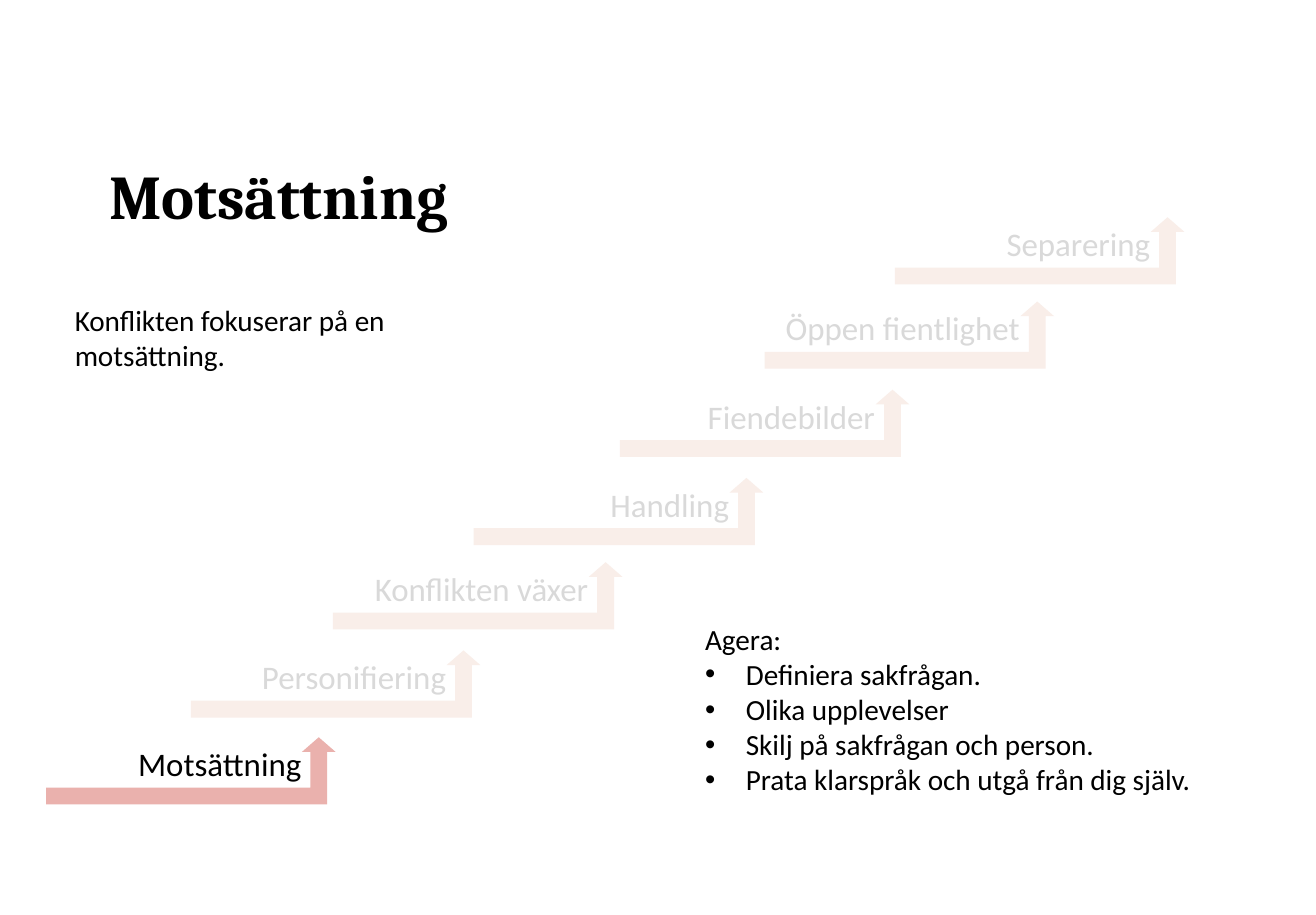
import pptx
import pptx.util
import pptx.dml.color
import pptx.enum.shapes
import pptx.enum.text
import pptx.oxml.ns
from lxml import etree

Inches, Pt = pptx.util.Inches, pptx.util.Pt
RGBColor = pptx.dml.color.RGBColor
PP_ALIGN = pptx.enum.text.PP_ALIGN

BLACK = RGBColor(0x00, 0x00, 0x00)
MUTED_TEXT = RGBColor(0xD9, 0xD9, 0xD9)
ACTIVE_STEP = RGBColor(0xEA, 0xB1, 0xAD)
MUTED_STEP = RGBColor(0xF9, 0xEE, 0xE9)

# Content
HEADING = "Motsättning"
DESCRIPTION = "Konflikten fokuserar på en motsättning."
ADVICE_HEADING = "Agera:"
ADVICE = [
    "Definiera sakfrågan.",
    "Olika upplevelser",
    "Skilj på sakfrågan och person.",
    "Prata klarspråk och utgå från dig själv.",
]
# Conflict steps from the bottom up: label, arrow left, arrow top
STEPS = [
    ("Motsättning", 0.35, 5.6),
    ("Personifiering", 1.45, 4.94),
    ("Konflikten växer", 2.53, 4.27),
    ("Handling", 3.6, 3.63),
    ("Fiendebilder", 4.71, 2.96),
    ("Öppen fientlighet", 5.81, 2.29),
    ("Separering", 6.8, 1.65),
]
ARROW_SIZE = (2.2, 0.51)
LABEL_SIZE = (2.09, 0.4)
LABEL_OFFSET = 0.15
BULLET_INDENT = 0.31


def add_run(paragraph, text, size, color=BLACK, font="Calibri", bold=False):
    run = paragraph.add_run()
    run.text = text
    run.font.name, run.font.size, run.font.bold = font, Pt(size), bold
    run.font.color.rgb = color


def add_text_frame(slide, left, top, width, height):
    box = slide.shapes.add_textbox(*map(Inches, (left, top, width, height)))
    box.text_frame.word_wrap = True
    return box.text_frame


def add_bullet(paragraph):
    properties = paragraph._p.get_or_add_pPr()
    properties.set("marL", str(Inches(BULLET_INDENT)))
    properties.set("indent", str(-Inches(BULLET_INDENT)))
    font = etree.SubElement(properties, pptx.oxml.ns.qn("a:buFont"))
    font.set("typeface", "Arial")
    bullet = etree.SubElement(properties, pptx.oxml.ns.qn("a:buChar"))
    bullet.set("char", "•")


def add_step(slide, label, left, top, active):
    label_frame = add_text_frame(slide, left - LABEL_OFFSET, top, *LABEL_SIZE)
    label_frame.margin_right = 0
    paragraph = label_frame.paragraphs[0]
    paragraph.alignment = PP_ALIGN.RIGHT
    add_run(paragraph, label, 18, BLACK if active else MUTED_TEXT)

    arrow = slide.shapes.add_shape(
        pptx.enum.shapes.MSO_SHAPE.BENT_UP_ARROW,
        *map(Inches, (left, top, *ARROW_SIZE)))
    arrow.adjustments[2] = 0.218
    arrow.shadow.inherit = False
    arrow.fill.solid()
    arrow.fill.fore_color.rgb = ACTIVE_STEP if active else MUTED_STEP
    arrow.line.fill.background()


def main():
    presentation = pptx.Presentation()
    presentation.slide_width = Inches(10)
    presentation.slide_height = Inches(6.95)
    slide = presentation.slides.add_slide(presentation.slide_layouts[5])

    # Title
    title = slide.shapes.title
    title.left, title.top, title.width, title.height = map(
        Inches, (0.83, 0.84, 4.7, 1.35))
    title_frame = title.text_frame
    title_frame.word_wrap = True
    title_frame.vertical_anchor = pptx.enum.text.MSO_ANCHOR.MIDDLE
    title_frame.margin_left = title_frame.margin_right = 0
    title_frame.margin_top = title_frame.margin_bottom = 0
    heading = title_frame.paragraphs[0]
    heading.alignment = PP_ALIGN.LEFT
    heading.line_spacing = 0.9
    add_run(heading, HEADING, 34, font="Cambria", bold=True)

    # Staircase, with the current step highlighted
    for label, left, top in STEPS:
        add_step(slide, label, left, top, active=label == HEADING)

    # Description
    description = add_text_frame(slide, 0.47, 2.25, 3.13, 0.64)
    add_run(description.paragraphs[0], DESCRIPTION, 16)

    # Advice
    advice = add_text_frame(slide, 5.26, 4.67, 4.33, 1.45)
    add_run(advice.paragraphs[0], ADVICE_HEADING, 16)
    for item in ADVICE:
        paragraph = advice.add_paragraph()
        add_bullet(paragraph)
        add_run(paragraph, item, 16)

    presentation.save("out.pptx")


if __name__ == "__main__":
    main()
